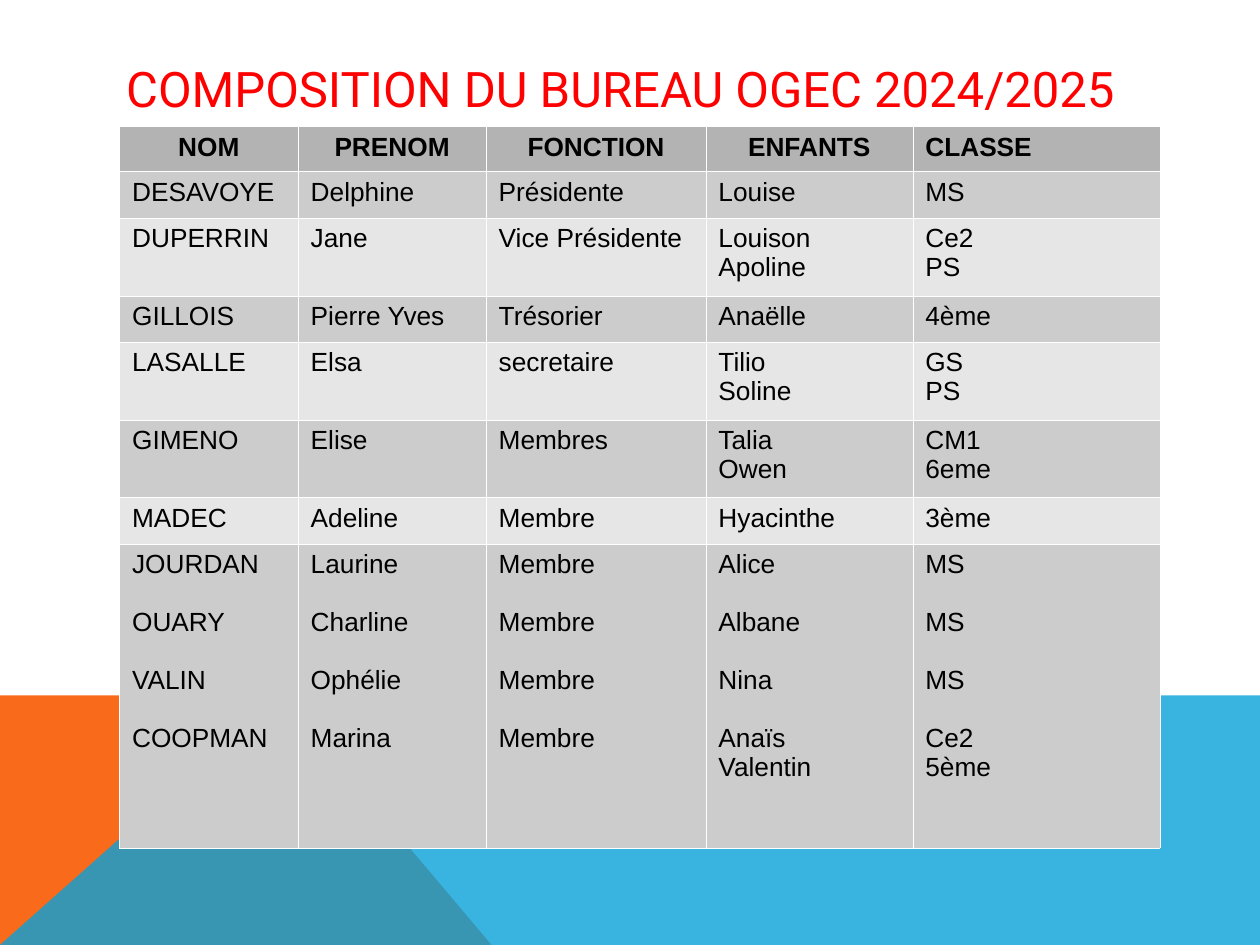
import pptx
import pptx.util
import pptx.dml.color
import pptx.enum.text
import pptx.oxml

Cm = pptx.util.Cm
Pt = pptx.util.Pt
ALIGN = pptx.enum.text.PP_ALIGN
ANCHOR = pptx.enum.text.MSO_ANCHOR

colors = {
    "title": "FF0000",
    "text": "000000",
    "orange": "F96A1B",
    "blue": "08A1D9",
    "border": "FFFFFF",
    "header": "B3B3B3",
    "dark": "CCCCCC",
    "light": "E6E6E6",
}


def rgb(name):
    return pptx.dml.color.RGBColor.from_string(colors[name])


def write(frame, text, size=15, font="Arial", color="text", bold=False,
          align=ALIGN.LEFT, anchor=ANCHOR.TOP, gaps=()):
    frame.word_wrap = True
    frame.vertical_anchor = anchor
    for index, line in enumerate(text.split("\n")):
        para = frame.paragraphs[0] if index == 0 else frame.add_paragraph()
        para.alignment = align
        para.space_before = Pt(16.5 if index in gaps else 0)
        span = para.add_run()
        span.text = line
        span.font.size = Pt(size)
        span.font.name = font
        span.font.bold = bold
        span.font.color.rgb = rgb(color)


deck = pptx.Presentation()
deck.slide_width = Cm(25.4)
deck.slide_height = Cm(19.05)
page = deck.slides.add_slide(deck.slide_layouts[5])

bands = [
    ("orange", [(0, 19.05), (0, 14.02), (5.66, 14.02), (9.91, 19.05)], 100),
    ("blue", [(0, 19.05), (5.66, 14.02), (25.4, 14.02), (25.4, 19.05)], 80),
]
for color, points, opacity in bands:
    corners = [(Cm(x), Cm(y)) for x, y in points]
    builder = page.shapes.build_freeform(*corners[0])
    builder.add_line_segments(corners[1:], close=True)
    band = builder.convert_to_shape()
    band.shadow.inherit = False
    band.line.fill.background()
    band.fill.solid()
    band.fill.fore_color.rgb = rgb(color)
    if opacity < 100:
        tint = band.fill._xPr.find(".//" + pptx.oxml.ns.qn("a:srgbClr"))
        tint.append(pptx.oxml.parse_xml(
            f'<a:alpha {pptx.oxml.ns.nsdecls("a")} val="{opacity * 1000}"/>'))

title = page.shapes.title
title.element.getparent().append(title.element)
title.left, title.top, title.width, title.height = Cm(2.29), Cm(1.02), Cm(20.88), Cm(1.52)
title.text_frame.auto_size = pptx.enum.text.MSO_AUTO_SIZE.NONE
write(title.text_frame, "COMPOSITION DU BUREAU OGEC 2024/2025", size=28,
      font="Roboto", color="title", anchor=ANCHOR.MIDDLE)

members = [
    ["NOM", "PRENOM", "FONCTION", "ENFANTS", "CLASSE"],
    ["DESAVOYE", "Delphine", "Présidente", "Louise", "MS"],
    ["DUPERRIN", "Jane", "Vice Présidente", "Louison\nApoline", "Ce2\nPS"],
    ["GILLOIS", "Pierre Yves", "Trésorier", "Anaëlle", "4ème"],
    ["LASALLE", "Elsa", "secretaire", "Tilio\nSoline", "GS\nPS"],
    ["GIMENO", "Elise", "Membres", "Talia\nOwen", "CM1\n6eme"],
    ["MADEC", "Adeline", "Membre", "Hyacinthe", "3ème"],
    ["JOURDAN\nOUARY\nVALIN\nCOOPMAN", "Laurine\nCharline\nOphélie\nMarina",
     "Membre\nMembre\nMembre\nMembre", "Alice\nAlbane\nNina\nAnaïs\nValentin",
     "MS\nMS\nMS\nCe2\n5ème"],
]
widths = [3.6, 3.79, 4.43, 4.17, 4.98]
heights = [0.91, 0.94, 1.57, 0.93, 1.57, 1.57, 0.93, 6.13]
table = page.shapes.add_table(len(members), len(widths), Cm(2.41), Cm(2.54),
                              Cm(sum(widths)), Cm(sum(heights))).table
table.horz_banding = False
for column, width in zip(table.columns, widths):
    column.width = Cm(width)

for r, (row, height) in enumerate(zip(members, heights)):
    table.rows[r].height = Cm(height)
    header = r == 0
    shade = "header" if header else ("light", "dark")[r % 2]
    gaps = (1, 2, 3) if r == len(members) - 1 else ()
    for c, text in enumerate(row):
        cell = table.cell(r, c)
        if header:
            align = ALIGN.CENTER if c < len(row) - 1 else ALIGN.LEFT
        else:
            align = ALIGN.JUSTIFY
        write(cell.text_frame, text, bold=header, align=align, gaps=gaps)
        properties = cell._tc.get_or_add_tcPr()
        for side in ("lnL", "lnR", "lnT", "lnB"):
            properties.append(pptx.oxml.parse_xml(
                f'<a:{side} {pptx.oxml.ns.nsdecls("a")} w="720"><a:solidFill>'
                f'<a:srgbClr val="{colors["border"]}"/></a:solidFill></a:{side}>'))
        cell.fill.solid()
        cell.fill.fore_color.rgb = rgb(shade)

deck.save("out.pptx")
